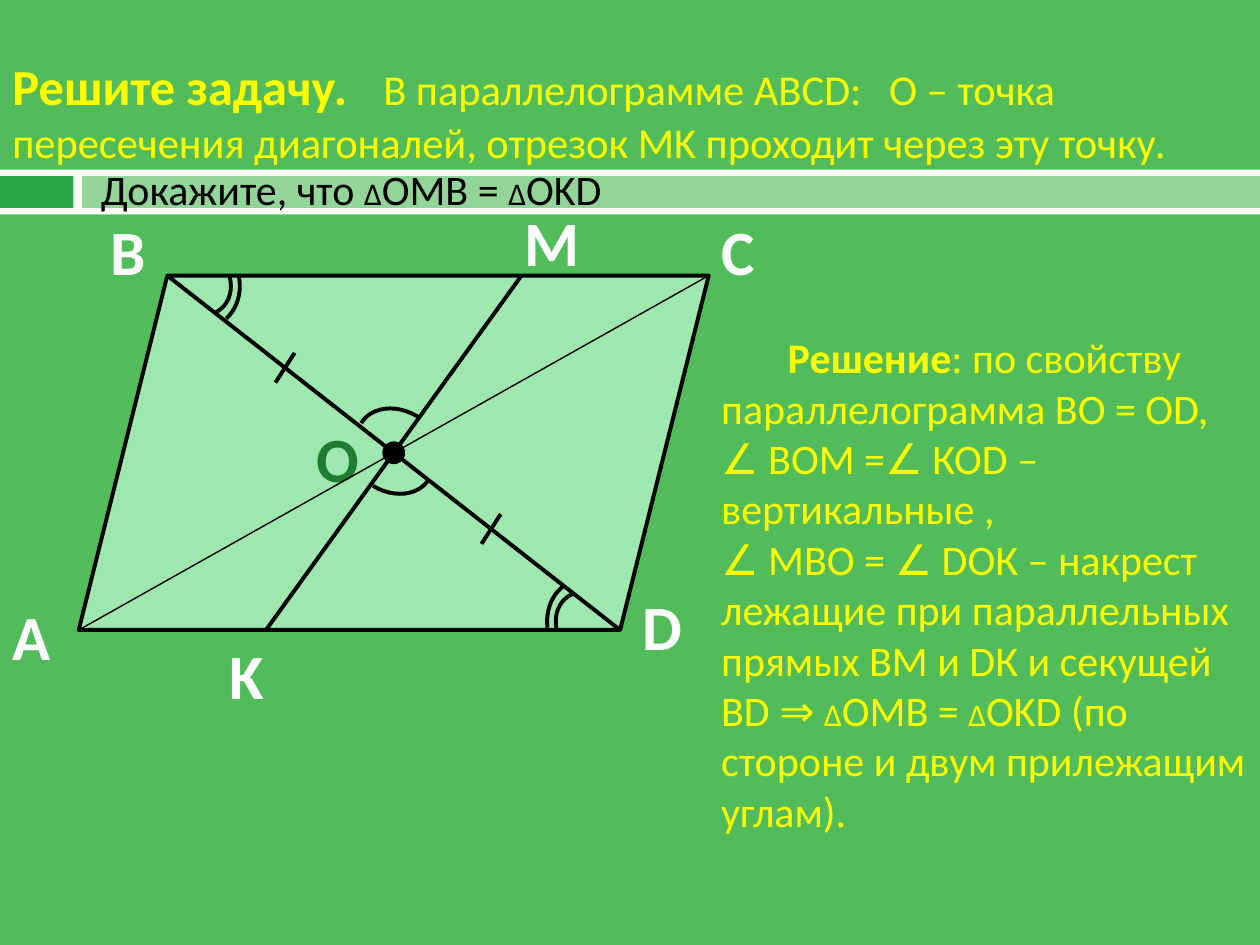
from pptx import Presentation
from pptx.dml.color import RGBColor
from pptx.enum.shapes import MSO_CONNECTOR, MSO_SHAPE
from pptx.oxml.ns import qn
from pptx.util import Pt
from lxml.etree import SubElement

FONT = "Calibri"
BACKGROUND = RGBColor(0x52, 0xBC, 0x5A)
WHITE = RGBColor(0xFF, 0xFF, 0xFF)
BLACK = RGBColor(0, 0, 0)
YELLOW = RGBColor(0xFF, 0xFF, 0)
ACCENT = RGBColor(0x29, 0xA7, 0x44)
BAND = RGBColor(0x93, 0xD5, 0x98)
PALE_GREEN = RGBColor(0x9E, 0xE7, 0xAE)
DARK_GREEN = RGBColor(0x1F, 0x7D, 0x33)


def add_shape(slide, kind, x, y, w, h, fill=None, line=None):
    sp = slide.shapes.add_shape(kind, Pt(x), Pt(y), Pt(w), Pt(h))
    sp.shadow.inherit = False
    if fill is None:
        sp.fill.background()
    else:
        sp.fill.solid()
        sp.fill.fore_color.rgb = fill
    if line is None:
        sp.line.fill.background()
    else:
        sp.line.color.rgb = BLACK
        sp.line.width = Pt(line)
    return sp


def add_line(slide, start, end, width=2.25):
    cn = slide.shapes.add_connector(
        MSO_CONNECTOR.STRAIGHT, *(Pt(v) for v in (*start, *end)))
    cn.line.color.rgb = BLACK
    cn.line.width = Pt(width)
    SubElement(cn._element.spPr, qn("a:effectLst"))


def add_arc(slide, vertex, offset, size, rotation, angles=None):
    """Draw an arc whose box is centred at an offset from a vertex."""
    cx, cy = vertex[0] + offset[0], vertex[1] + offset[1]
    w, h = size
    sp = add_shape(slide, MSO_SHAPE.ARC, cx - w / 2, cy - h / 2, w, h, line=2.25)
    sp.rotation = rotation
    for i, angle in enumerate(angles or ()):
        sp.adjustments[i] = angle


def add_text(slide, x, y, w, h, paragraphs, color, wrap=True):
    """Add a text box; each paragraph is a list of (text, size, bold) runs."""
    tf = slide.shapes.add_textbox(Pt(x), Pt(y), Pt(w), Pt(h)).text_frame
    tf.word_wrap = wrap
    for i, runs in enumerate(paragraphs):
        p = tf.add_paragraph() if i else tf.paragraphs[0]
        p.font.name = FONT
        p.font.color.rgb = color
        for text, size, bold in runs:
            r = p.add_run()
            r.text = text
            r.font.size = Pt(size)
            r.font.bold = bold
            r.font.name = FONT
            r.font.color.rgb = color
    return tf


def triangles_equal(ending=""):
    delta = ("∆", 18, False)
    return [delta, ("OMB = ", 24, False), delta, ("OKD" + ending, 24, False)]


def add_header_band(slide, x, y, w, h):
    inset, marker, gap = 3.6, 42, 5
    bar = x + marker + gap
    for left, top, width, height, color in (
            (x, y, w, h, WHITE),
            (x, y + inset, marker, h - 2 * inset, ACCENT),
            (bar, y + inset, x + w - bar, h - 2 * inset, BAND)):
        add_shape(slide, MSO_SHAPE.RECTANGLE, left, top, width, height, color)


def add_problem(slide, x, y, w, h):
    tf = add_text(slide, x, y, w, h, [[
        ("Решите задачу.", 28.8, True),
        ("\tВ параллелограмме ABCD:\tО – точка пересечения диагоналей, "
         "отрезок MK проходит через эту точку.", 24.3, False)]], YELLOW)
    tabs = tf.paragraphs[0]._p.get_or_add_pPr()
    tab_list = SubElement(tabs, qn("a:tabLst"))
    tabs.insert(0, tab_list)
    for position in (212, 501):
        SubElement(tab_list, qn("a:tab"), pos=str(Pt(position)), algn="l")


def add_task(slide, x, y, w, h):
    add_text(slide, x, y, w, h,
             [[("Докажите, что ", 24, False), *triangles_equal()]], BLACK, wrap=False)


def add_parallelogram(slide, x, y, w, h):
    slant = h / 4
    a, b = (x, y + h), (x + slant, y)
    c, d = (x + w, y), (x + w - slant, y + h)
    o = (x + w / 2, y + h / 2)
    m = (x + 253, y)
    k = (2 * o[0] - m[0], y + h)

    add_shape(slide, MSO_SHAPE.PARALLELOGRAM, x, y, w, h, PALE_GREEN, 2.25)
    for name, (px, py), dx, dy, color in (
            ("A", a, -45, -22, WHITE), ("B", b, -39.5, -39.5, WHITE),
            ("C", c, 0, -39.5, WHITE), ("D", d, 5.5, -28, WHITE),
            ("O", o, -51, -22.5, DARK_GREEN), ("K", k, -28, 0, WHITE),
            ("M", m, -5.5, -45, WHITE)):
        add_text(slide, px + dx, py + dy, 50, 51, [[(name, 36, True)]], color)

    add_line(slide, b, d)
    add_line(slide, m, k)
    add_line(slide, a, c, 0.79)
    add_shape(slide, MSO_SHAPE.OVAL, o[0] - 5.75, o[1] - 5.75, 11.5, 11.5, BLACK, 1.5)

    for start, end, part in ((b, o, 0.52), (o, d, 0.43)):
        tx, ty = (s + part * (e - s) for s, e in zip(start, end))
        add_line(slide, (tx + 5.5, ty - 8.5), (tx - 5.5, ty + 8.5))

    add_arc(slide, o, (-1.5, 2), (39.6, 50.4), 121.6)
    add_arc(slide, o, (3, -4), (39.6, 50.4), 301, (162, 3.88))
    for vertex, rotation, inner, outer in (
            (b, 57.4, (18.5, 3.4), (15, 2.3)),
            (d, 242.2, (-19.2, -2.5), (-15.6, -1.4))):
        add_arc(slide, vertex, inner, (39.6, 33.8), rotation, (175.68, 4.05))
        add_arc(slide, vertex, outer, (58.3, 50.4), rotation, (178.58, 211.47))


def add_solution(slide, x, y, w, h):
    tf = add_text(slide, x, y, w, h, [
        [("Решение", 24, True),
         (": по свойству параллелограмма ВО = ОD, ∠ ВОМ =∠ КОD – вертикальные ,",
          24, False)],
        [("∠ МВО = ∠ DОК – накрест лежащие при параллельных прямых ВМ и DК "
          "и секущей ВD ⇒ ", 24, False),
         *triangles_equal(" (по стороне и двум прилежащим углам).")]], YELLOW)
    tf.paragraphs[0]._p.get_or_add_pPr().set("indent", str(Pt(38)))


def main():
    prs = Presentation()
    prs.slide_width, prs.slide_height = Pt(720), Pt(540)
    slide = prs.slides.add_slide(prs.slide_layouts[6])
    slide.background.fill.solid()
    slide.background.fill.fore_color.rgb = BACKGROUND
    add_header_band(slide, 0, 97, 720, 25.5)
    add_problem(slide, 0, 28, 720, 75.5)
    add_parallelogram(slide, 45, 157.5, 360, 202.5)
    add_solution(slide, 405, 186, 315, 298)
    add_task(slide, 50.5, 90, 317.5, 36)
    prs.save("out.pptx")


if __name__ == "__main__":
    main()
